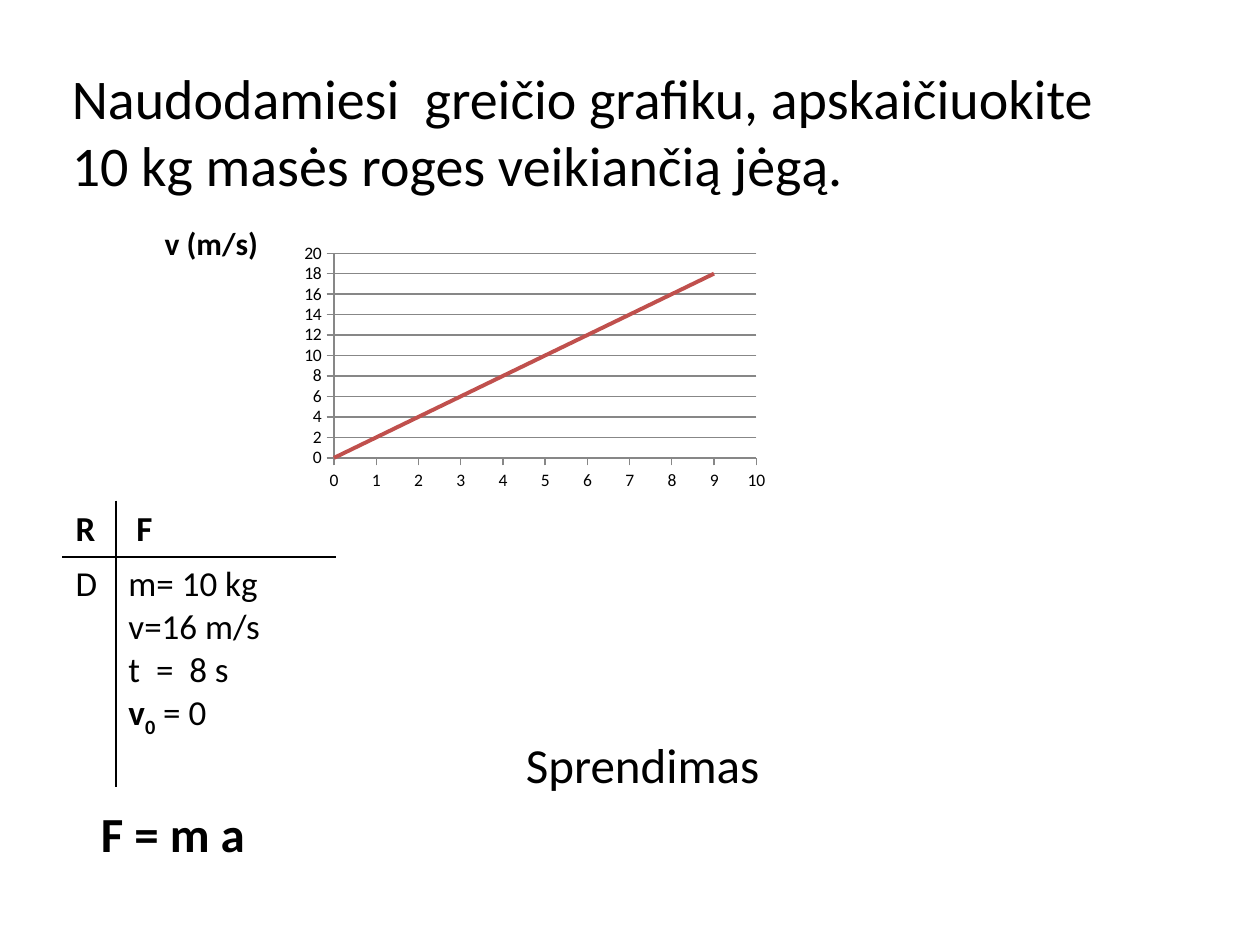
from collections import namedtuple
from dataclasses import dataclass

from pptx import Presentation
from pptx import util as u
from pptx.chart import data as chart_data
from pptx.dml import color
from pptx.enum import chart as chart_enum
from pptx.enum import text
from pptx.oxml import parse_xml
from pptx.oxml import ns

Box = namedtuple("Box", "left top width height")


@dataclass(frozen=True)
class Theme:
    font: str = "Calibri"
    ink: str = "000000"
    paper: str = "FFFFFF"
    grid: str = "878787"
    speed: str = "C0504D"
    title: int = 32
    body: int = 28
    table: int = 20
    chart_title: int = 18
    axis: int = 10


THEME = Theme()


def px(length):
    return u.Emu(length * 9144)


def rgb(value):
    return color.RGBColor.from_string(value)


def set_all(target, **values):
    for name, value in values.items():
        setattr(target, name, value)


def style_font(font, size, **values):
    set_all(font, name=THEME.font, size=u.Pt(size), **values)
    font.color.rgb = rgb(THEME.ink)


def place(shape, box):
    set_all(shape, **{name: px(value) for name, value in box._asdict().items()})


def add_run(paragraph, words, size, bold=False):
    run = paragraph.add_run()
    run.text = words
    style_font(run.font, size, bold=bold)
    return run


def fill_title(shape, box):
    place(shape, box)
    frame = shape.text_frame
    frame.text = "Naudodamiesi  greičio grafiku, apskaičiuokite\v10 kg masės roges veikiančią jėgą."
    set_all(frame, vertical_anchor=text.MSO_ANCHOR.TOP, margin_top=px(27),
            auto_size=text.MSO_AUTO_SIZE.NONE)
    paragraph = frame.paragraphs[0]
    paragraph.alignment = text.PP_ALIGN.LEFT
    for run in paragraph.runs:
        style_font(run.font, THEME.title)


def fill_solution(shape, box):
    place(shape, box)
    frame = shape.text_frame
    lines = (("Sprendimas", text.PP_ALIGN.CENTER, False),
             ("F = m a", text.PP_ALIGN.LEFT, True))
    for index, (words, alignment, bold) in enumerate(lines):
        paragraph = frame.add_paragraph() if index else frame.paragraphs[0]
        paragraph.alignment = alignment
        add_run(paragraph, words, THEME.body, bold)
        paragraph._p.get_or_add_pPr().append(
            parse_xml(f"<a:buNone {ns.nsdecls('a')}/>"))


def set_borders(cell, inner):
    properties = cell._tc.get_or_add_tcPr()
    for index, side in enumerate("LRTB"):
        line_color = THEME.ink if side in inner else THEME.paper
        properties.insert(index, parse_xml(
            f'<a:ln{side} {ns.nsdecls("a")} w="12700"><a:solidFill>'
            f'<a:srgbClr val="{line_color}"/></a:solidFill></a:ln{side}>'))


def add_givens(slide, box):
    cells = (
        ("RB", [[("R", True)]]),
        ("LB", [[(" F", True)]]),
        ("RT", [[("D", False)]]),
        ("LT", [[("m= 10 kg", False)], [("v=16 m/s", False)], [("t  =  8 s", False)],
                [("v", True), ("0", True), (" = 0", False)]]),
    )
    table = slide.shapes.add_table(2, 2, *map(px, box)).table
    set_all(table, first_row=False, horz_banding=False)
    label_width, heading_height = 42, 44
    for column, width in zip(table.columns, (label_width, box.width - label_width)):
        column.width = px(width)
    for row, height in zip(table.rows, (heading_height, box.height - heading_height)):
        row.height = px(height)
    for cell, (inner, lines) in zip(table.iter_cells(), cells):
        cell.fill.background()
        set_borders(cell, inner)
        for index, line in enumerate(lines):
            frame = cell.text_frame
            paragraph = frame.add_paragraph() if index else frame.paragraphs[0]
            for words, bold in line:
                run = add_run(paragraph, words, THEME.table, bold)
                if words == "0":
                    run._r.get_or_add_rPr().set("baseline", "-25000")


def set_layout(parent, index, target="", **values):
    for old in parent.findall(ns.qn("c:layout")):
        parent.remove(old)
    inner = f'<c:layoutTarget val="{target}"/>' if target else ""
    modes = "".join(f'<c:{axis}Mode val="edge"/>' for axis in "xy")
    numbers = "".join(f'<c:{name} val="{value}"/>' for name, value in values.items())
    parent.insert(index, parse_xml(
        f'<c:layout {ns.nsdecls("c")}><c:manualLayout>{inner}{modes}{numbers}'
        "</c:manualLayout></c:layout>"))


def add_speed_chart(slide, box):
    values = chart_data.XyChartData()
    series = values.add_series("Series 1")
    for second in range(10):
        series.add_data_point(second, 2 * second)
    chart = slide.shapes.add_chart(
        chart_enum.XL_CHART_TYPE.XY_SCATTER_SMOOTH_NO_MARKERS, *map(px, box), values).chart
    style_font(chart.font, THEME.axis)
    set_all(chart, has_legend=False, has_title=True)
    add_run(chart.chart_title.text_frame.paragraphs[0], " v (m/s) ", THEME.chart_title, True)
    set_layout(chart.chart_title._element, 1, x=0.02, y=0.06)
    set_layout(chart._chartSpace.chart.plotArea, 0, "inner", x=0.27, y=0.18, w=0.58, h=0.65)
    for axis, maximum, unit, grid in ((chart.category_axis, 10, 1, False),
                                      (chart.value_axis, 20, 2, True)):
        set_all(axis, minimum_scale=0, maximum_scale=maximum, major_unit=unit,
                has_major_gridlines=grid,
                major_tick_mark=chart_enum.XL_TICK_MARK.OUTSIDE,
                minor_tick_mark=chart_enum.XL_TICK_MARK.NONE)
        style_font(axis.tick_labels.font, THEME.axis)
        lines = [axis.format.line] + ([axis.major_gridlines.format.line] if grid else [])
        for line in lines:
            line.color.rgb = rgb(THEME.grid)
            line.width = u.Pt(0.75)
    plot = chart.plots[0]
    plot.vary_by_categories = False
    speed = plot.series[0]
    speed.smooth = True
    speed.format.line.color.rgb = rgb(THEME.speed)
    speed.format.line.width = u.Pt(2.25)


def main():
    presentation = Presentation()
    set_all(presentation, slide_width=px(1000), slide_height=px(750))
    slide = presentation.slides.add_slide(presentation.slide_layouts[1])
    fill_title(slide.shapes.title, Box(47, 23, 900, 259))
    add_givens(slide, Box(50, 398, 216, 227))
    fill_solution(slide.placeholders[1], Box(70, 578, 880, 148))
    add_speed_chart(slide, Box(109, 156, 578, 250))
    presentation.save("out.pptx")


if __name__ == "__main__":
    main()
